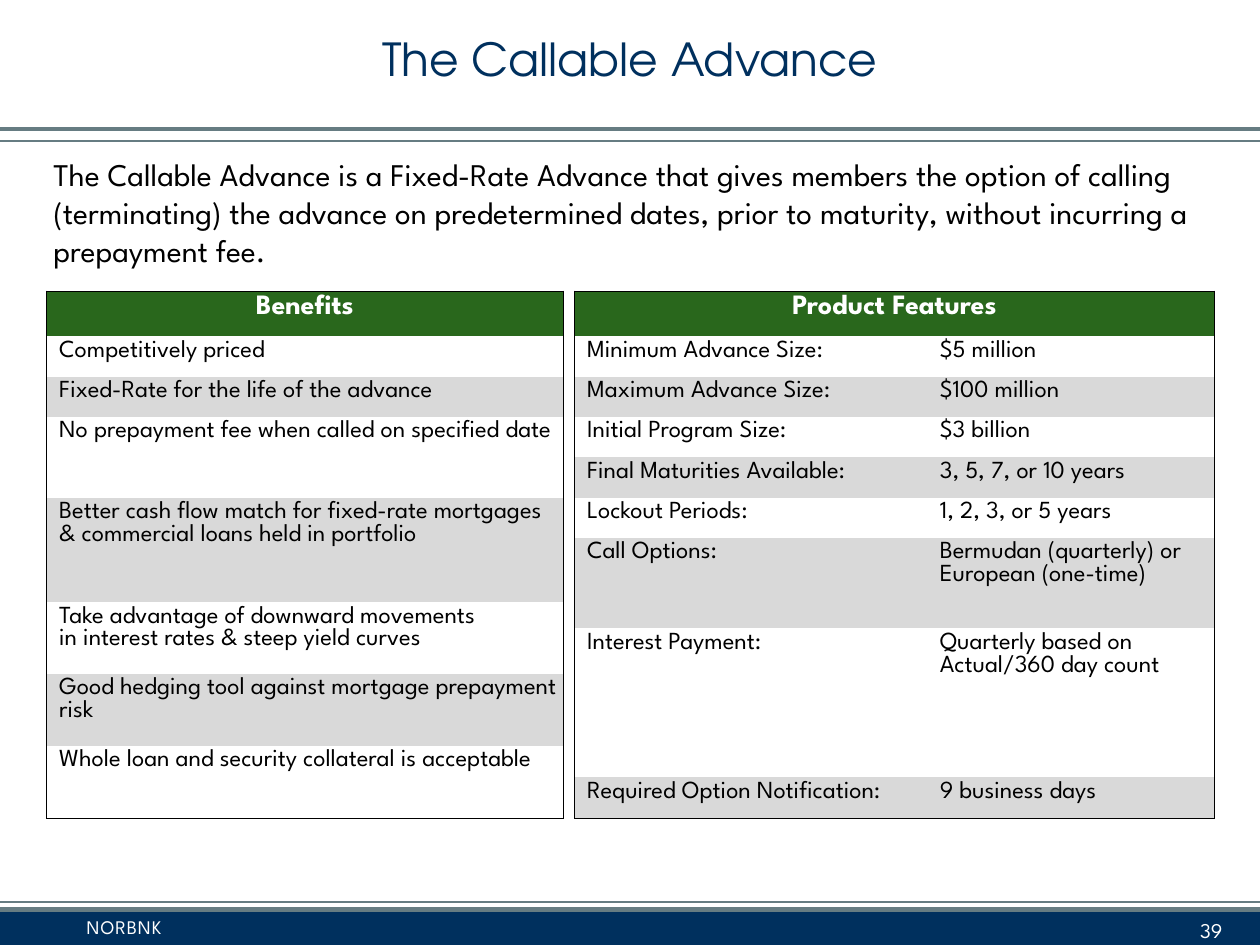
import pptx
import pptx.util
import pptx.dml.color
import pptx.enum.shapes
import pptx.enum.text
import pptx.oxml
import pptx.oxml.ns

Inch = pptx.util.Inches
Pt = pptx.util.Pt
RGB = pptx.dml.color.RGBColor
Kind = pptx.enum.shapes.MSO_SHAPE
Align = pptx.enum.text.PP_ALIGN
Mid = pptx.enum.text.MSO_ANCHOR.MIDDLE

NAVY = RGB(0x00, 0x30, 0x5E)
SLATE = RGB(0x66, 0x7C, 0x82)
GREEN = RGB(0x29, 0x67, 0x1C)
GRAY = RGB(0xD9, 0xD9, 0xD9)
WHITE = RGB(0xFF, 0xFF, 0xFF)
BLACK = RGB(0x00, 0x00, 0x00)
BODY = "League Spartan"
HEAD = "TeX Gyre Adventor"
WIDE, HIGH = 10, 7.5
SPACE = pptx.oxml.ns.nsdecls("a")

TITLE = "The Callable Advance"
INTRO = ("The Callable Advance is a Fixed-Rate Advance that gives members the option "
         "of calling (terminating) the advance on predetermined dates, prior to "
         "maturity, without incurring a prepayment fee.")
FOOTER = "NORBNK"
PAGE = "39"
HEADS = [(0, "Benefits"), (2, "Product Features")]
BENEFITS = [
    (1, "Competitively priced"),
    (1, "Fixed-Rate for the life of the advance"),
    (2, "No prepayment fee when called on specified date"),
    (2, "Better cash flow match for fixed-rate mortgages & commercial loans held in portfolio"),
    (2, "Take advantage of downward movements \vin interest rates & steep yield curves"),
    (1, "Good hedging tool against mortgage prepayment risk"),
    (2, "Whole loan and security collateral is acceptable"),
]
FEATURES = [
    (1, "Minimum Advance Size:", "$5 million"),
    (1, "Maximum Advance Size:", "$100 million"),
    (1, "Initial Program Size:", "$3 billion"),
    (1, "Final Maturities Available:", "3, 5, 7, or 10 years"),
    (1, "Lockout Periods:", "1, 2, 3, or 5 years"),
    (2, "Call Options:", "Bermudan (quarterly) or European (one-time)"),
    (3, "Interest Payment:", "Quarterly based on Actual/360 day count"),
    (1, "Required Option Notification:", "9 business days"),
]
COLS = [4.1, 0.09, 2.8, 2.28]
ROWS = [0.36] + [0.32] * 5 + [0.51, 0.21, 0.36, 0.57, 0.25, 0.33]
SIDES = ["LR", "LR", "L", "R"]
BANDS = [(1.01, 0.03, SLATE), (7.2, 0.04, SLATE), (7.24, 0.26, NAVY)]
RULES = [(1.12, 0.75), (7.16, 1)]

deck = pptx.Presentation()
deck.slide_width, deck.slide_height = Inch(WIDE), Inch(HIGH)
slide = deck.slides.add_slide(deck.slide_layouts[6])
shapes = slide.shapes


def style(item, **values):
    for name, value in values.items():
        setattr(item, name, value)


def write(frame, text, size, color, align=Align.LEFT, face=BODY, bold=False, lead=None):
    para = frame.paragraphs[0]
    para.text = text
    style(para, alignment=align, line_spacing=lead)
    for run in para.runs:
        style(run.font, name=face, size=Pt(size), bold=bold)
        run.font.color.rgb = color
    return para


def label(place, text, size, color, **look):
    frame = shapes.add_textbox(*map(Inch, place)).text_frame
    style(frame, word_wrap=True, vertical_anchor=Mid)
    return write(frame, text, size, color, **look)


def clear(cell):
    cell.fill.background()
    style(cell, margin_left=0, margin_right=0, margin_top=0, margin_bottom=0)
    para = cell.text_frame.paragraphs[0]
    para._p.append(pptx.oxml.parse_xml(f'<a:endParaRPr {SPACE} sz="800"/>'))


def edge(cell, sides):
    props = cell._tc.get_or_add_tcPr()
    for spot, side in enumerate("LRTB"):
        fill = '<a:solidFill><a:srgbClr val="000000"/></a:solidFill>' if side in sides else "<a:noFill/>"
        props.insert(spot, pptx.oxml.parse_xml(f'<a:ln{side} {SPACE} w="6350">{fill}</a:ln{side}>'))


def fill_cell(row, col, text, size, ink, back, **look):
    cell = grid.cell(row, col)
    cell.fill.solid()
    cell.fill.fore_color.rgb = back
    right = 0.1 if col or row == 0 else 0.01
    style(cell, margin_left=Inch(0.1), margin_right=Inch(right),
          margin_top=Inch(0.03), margin_bottom=Inch(0.03))
    write(cell.text_frame, text, size, ink, **look)


def stack(items, first):
    row = 1
    for index, (span, *texts) in enumerate(items):
        for col, text in enumerate(texts, first):
            if span > 1:
                grid.cell(row, col).merge(grid.cell(row + span - 1, col))
            fill_cell(row, col, text, 14, BLACK, GRAY if index % 2 else WHITE)
        row += span


for top, tall, color in BANDS:
    band = shapes.add_shape(Kind.RECTANGLE, 0, Inch(top), Inch(WIDE), Inch(tall))
    band.shadow.inherit = False
    band.fill.solid()
    band.fill.fore_color.rgb = color
    band.line.fill.background()

for top, width in RULES:
    rule = shapes.add_connector(pptx.enum.shapes.MSO_CONNECTOR.STRAIGHT,
                                0, Inch(top), Inch(WIDE), Inch(top))
    rule.line.color.rgb = SLATE
    rule.line.width = Pt(width)
    rule._element.spPr.append(pptx.oxml.parse_xml(f'<a:effectLst {SPACE}/>'))

label((0, 0, WIDE, 1), TITLE, 26, NAVY, align=Align.CENTER, face=HEAD, lead=0.85)
foot = label((0.59, 7.21, 6.74, 0.29), FOOTER, 11, WHITE)
foot.runs[0].font._element.set("spc", "50")
label((7.47, 7.25, 2.33, 0.26), PAGE, 12, WHITE, align=Align.RIGHT)

intro = shapes.add_shape(Kind.ROUNDED_RECTANGLE, *map(Inch, (0.3, 1.21, 9.39, 0.94)))
intro.adjustments[0] = 0.09
intro.shadow.inherit = False
intro.fill.background()
intro.line.fill.background()
style(intro.text_frame, word_wrap=True, vertical_anchor=Mid)
write(intro.text_frame, INTRO, 18, BLACK)

grid = shapes.add_table(len(ROWS), len(COLS), Inch(0.37), Inch(2.31),
                        Inch(sum(COLS)), Inch(sum(ROWS))).table
style(grid, first_row=False, horz_banding=False)
for line, tall in zip(grid.rows, ROWS):
    line.height = Inch(tall)
for line, wide in zip(grid.columns, COLS):
    line.width = Inch(wide)
for cell in grid.iter_cells():
    clear(cell)

grid.cell(0, 2).merge(grid.cell(0, 3))
for col, text in HEADS:
    fill_cell(0, col, text, 16, WHITE, GREEN, align=Align.CENTER, bold=True)
stack(BENEFITS, 0)
stack(FEATURES, 2)

for row in range(len(ROWS)):
    for col, sides in enumerate(SIDES):
        cell = grid.cell(row, col)
        if cell.is_merge_origin:
            sides += SIDES[col + cell.span_width - 1]
        end = row + cell.span_height
        if col != 1:
            sides += ("T" if row == 0 else "") + ("B" if end == len(ROWS) else "")
        edge(cell, sides)

deck.save("out.pptx")
